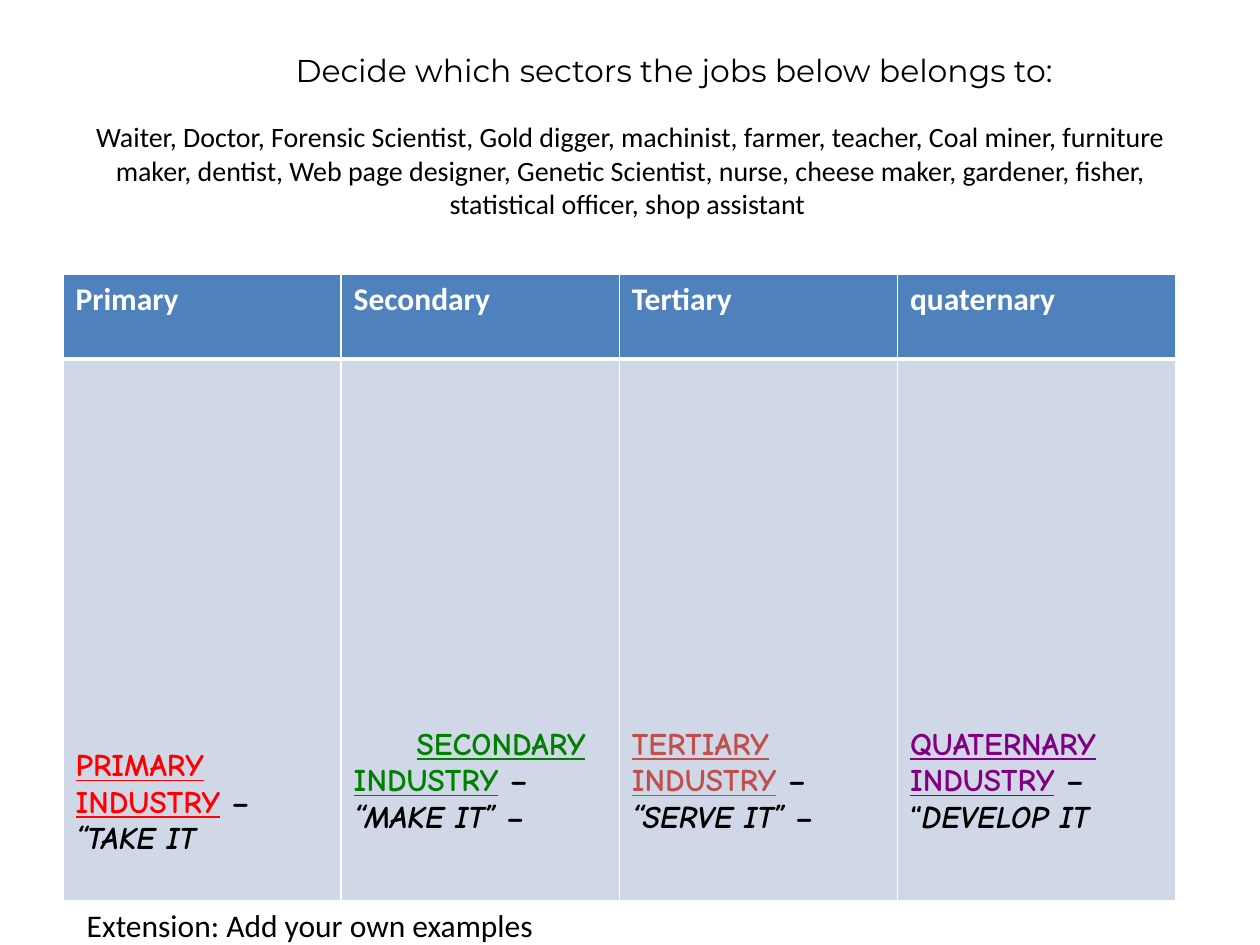
"""Build a slide on which jobs are sorted into four sectors of industry."""
from dataclasses import dataclass

from lxml import etree
from pptx import Presentation
from pptx.dml.color import RGBColor
from pptx.enum.text import MSO_ANCHOR, MSO_AUTO_SIZE, PP_ALIGN
from pptx.oxml.ns import qn
from pptx.util import Inches, Pt

MIDDLE, TOP = MSO_ANCHOR.MIDDLE, MSO_ANCHOR.TOP
NO_FIT, GROW = MSO_AUTO_SIZE.NONE, MSO_AUTO_SIZE.SHAPE_TO_FIT_TEXT
CENTER, LEFT = PP_ALIGN.CENTER, PP_ALIGN.LEFT
TITLE_ONLY = 5


@dataclass(frozen=True)
class Theme:
    """Hold the colours, fonts and type sizes of the slide."""
    black: str = "000000"
    white: str = "FFFFFF"
    header: str = "4F81BD"
    body: str = "D0D8E8"
    text_font: str = "Calibri"
    heading_font: str = "Montserrat"
    sector_font: str = "Comic Neue"
    jobs_size: int = 16
    text_size: int = 18


@dataclass(frozen=True)
class Sector:
    """Describe one column of the table."""
    heading: str
    industry: str
    color: str
    dash: str
    motto: str
    ending: str = ""
    text_top: float = 2.92
    indent: float = 0


THEME = Theme()
JOBS = (
    "Waiter, Doctor, Forensic Scientist, Gold digger, machinist, farmer, teacher, "
    "Coal miner, furniture maker, dentist, Web page designer, Genetic Scientist, nurse, "
    "cheese maker, gardener, fisher, statistical officer, shop assistant "
)
SECTORS = (
    Sector("Primary", "PRIMARY INDUSTRY", "FF0000", " – ", "“TAKE IT", text_top=3.09),
    Sector("Secondary", "SECONDARY INDUSTRY", "008000", " – ", "“MAKE IT”", " –", indent=0.5),
    Sector("Tertiary", "TERTIARY INDUSTRY", "C0504D", " – ", "“SERVE IT”", " –"),
    Sector("quaternary", "QUATERNARY INDUSTRY", "800080", " – “", "DEVELOP IT"),
)


def apply_format(target, values: dict) -> None:
    """Set each named attribute of the target."""
    for name, value in values.items():
        setattr(target, name, value)


def add_span(para, text: str, color: str = THEME.black, font: str = THEME.text_font,
             size: int = THEME.text_size, **values) -> None:
    """Append a formatted run to a paragraph."""
    span = para.add_run()
    span.text = text
    apply_format(span.font, {"name": font, "size": Pt(size), "bold": False, **values})
    span.font.color.rgb = RGBColor.from_string(color)


def add_label(slide, text: str, place: tuple, font: str, align, wrap: bool) -> None:
    """Add a one-line text box."""
    box = slide.shapes.add_textbox(*map(Inches, place))
    apply_format(box.text_frame, {"word_wrap": wrap, "auto_size": GROW})
    para = box.text_frame.paragraphs[0]
    para.alignment = align
    add_span(para, text, font=font)


def style_cell(cell, fill: str, widths: dict[str, int]) -> None:
    """Fill a cell and draw its white borders."""
    cell.fill.solid()
    cell.fill.fore_color.rgb = RGBColor.from_string(fill)
    properties = cell._tc.get_or_add_tcPr()
    for position, (side, width) in enumerate(widths.items()):
        line = etree.Element(qn(f"a:ln{side}"), w=str(Pt(width)))
        solid = etree.SubElement(line, qn("a:solidFill"))
        etree.SubElement(solid, qn("a:srgbClr"), val=THEME.white)
        properties.insert(position, line)


def fill_column(table, index: int, sector: Sector) -> None:
    """Write the header and the description of one sector."""
    header, body = table.cell(0, index), table.cell(1, index)
    style_cell(header, THEME.header, {"L": 1, "R": 1, "T": 1, "B": 3})
    style_cell(body, THEME.body, {"L": 1, "R": 1, "T": 3, "B": 1})
    add_span(header.text_frame.paragraphs[0], sector.heading, THEME.white, bold=True)

    apply_format(body, {"vertical_anchor": TOP, "margin_top": Inches(sector.text_top)})
    para = body.text_frame.paragraphs[0]
    if sector.indent:
        para._p.get_or_add_pPr().set("indent", str(Inches(sector.indent)))
    spans = (
        (sector.industry, sector.color, {"underline": True}),
        (sector.dash, THEME.black, {}),
        (sector.motto, THEME.black, {"italic": True}),
        (sector.ending, THEME.black, {}),
    )
    for text, color, values in spans:
        if text:
            add_span(para, text, color, THEME.sector_font, bold=True, **values)


def add_jobs(slide) -> None:
    """Write the list of jobs in the title placeholder."""
    title = slide.shapes.title
    apply_format(title, {"left": Inches(0.51), "top": Inches(0.68),
                         "width": Inches(8.99), "height": Inches(1.34)})
    apply_format(title.text_frame, {"word_wrap": True, "auto_size": NO_FIT,
                                    "vertical_anchor": MIDDLE})
    para = title.text_frame.paragraphs[0]
    para.alignment = CENTER
    add_span(para, JOBS, size=THEME.jobs_size)


def add_sector_table(slide) -> None:
    """Add the table with a column for each sector."""
    place = map(Inches, (0.5, 2.18, 8.83, 4.97))
    table = slide.shapes.add_table(2, len(SECTORS), *place).table
    for row, height in zip(table.rows, (0.67, 4.3)):
        row.height = Inches(height)
    for index, sector in enumerate(SECTORS):
        fill_column(table, index, sector)


def main() -> None:
    """Build and save the deck."""
    deck = Presentation()
    apply_format(deck, {"slide_width": Inches(10), "slide_height": Inches(7.5)})
    slide = deck.slides.add_slide(deck.slide_layouts[TITLE_ONLY])
    add_jobs(slide)
    add_sector_table(slide)
    add_label(slide, "Decide which sectors the jobs below belongs to: ",
              (0.51, 0.36, 9.75, 0.4), THEME.heading_font, CENTER, True)
    add_label(slide, "Extension: Add your own examples",
              (0.59, 7.14, 4.14, 0.4), THEME.text_font, LEFT, False)
    deck.save("out.pptx")


if __name__ == "__main__":
    main()
